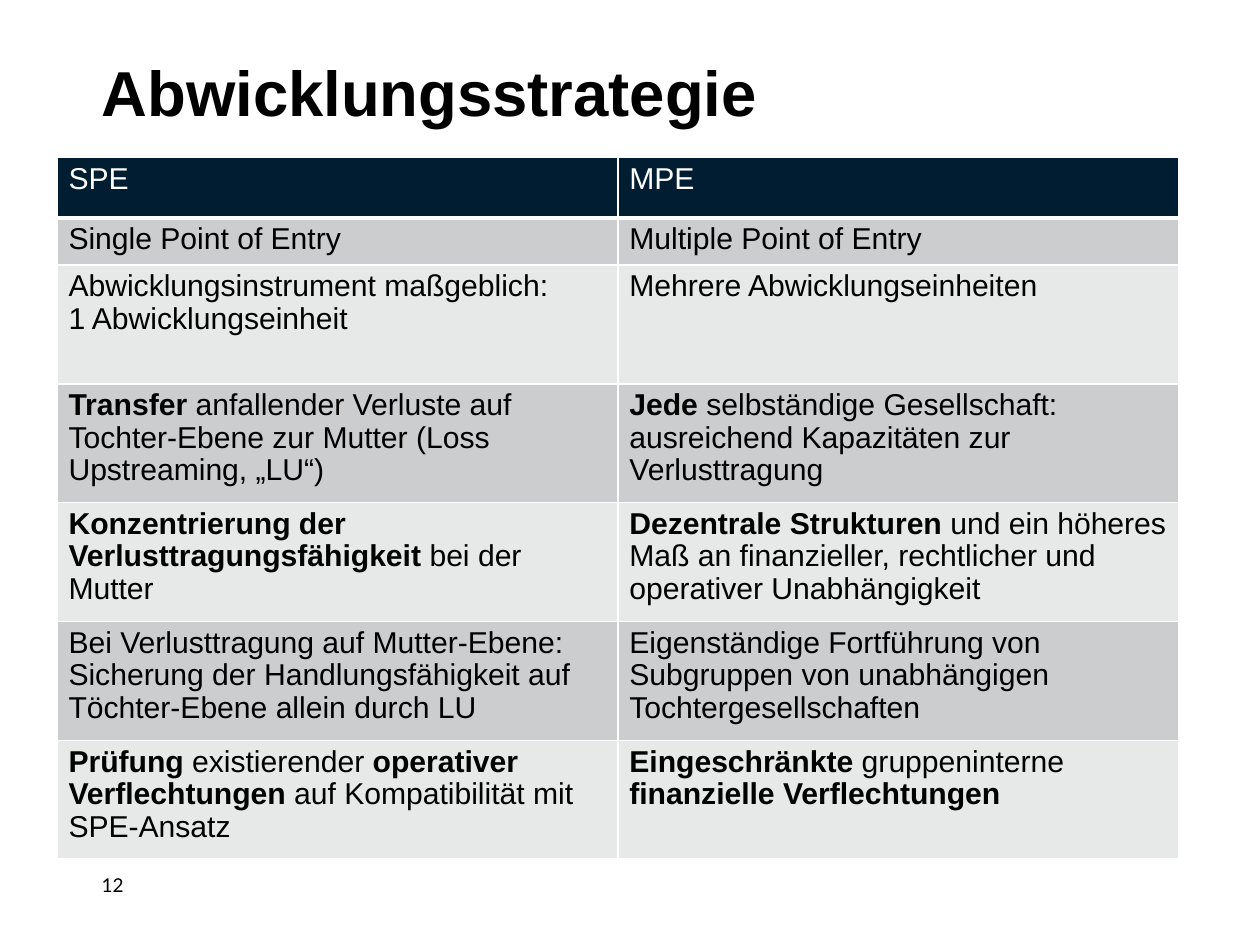
from dataclasses import dataclass

import lxml.etree
import pptx
import pptx.dml.color
import pptx.enum.text
import pptx.oxml.ns
import pptx.util

Inches = pptx.util.Inches
Pt = pptx.util.Pt
ANCHOR = pptx.enum.text.MSO_ANCHOR
qn = pptx.oxml.ns.qn

BLACK, WHITE, NAVY = "000000", "FFFFFF", "001D31"
BANDS = ("CCCDCE", "E7E8E8")


@dataclass
class Row:
    """One comparison row; asterisks enclose bold words."""
    height: float
    spe: str
    mpe: str


ROWS = [
    Row(0.53, "SPE", "MPE"),
    Row(0.41, "Single Point of Entry", "Multiple Point of Entry"),
    Row(1.04, "Abwicklungsinstrument maßgeblich:\n1 Abwicklungseinheit",
        "Mehrere Abwicklungseinheiten"),
    Row(1.04, "*Transfer* anfallender Verluste auf Tochter-Ebene zur Mutter "
        "(Loss Upstreaming, „LU“)",
        "*Jede* selbständige Gesellschaft: ausreichend Kapazitäten zur "
        "Verlusttragung"),
    Row(1.04, "*Konzentrierung der Verlusttragungsfähigkeit* bei der Mutter",
        "*Dezentrale Strukturen *und ein höheres Maß an finanzieller, "
        "rechtlicher und operativer Unabhängigkeit"),
    Row(1.04, "Bei Verlusttragung auf Mutter-Ebene: Sicherung der "
        "Handlungsfähigkeit auf Töchter-Ebene allein durch LU",
        "Eigenständige Fortführung von Subgruppen von unabhängigen "
        "Tochtergesellschaften"),
    Row(1.04, "*Prüfung* existierender *operativer Verflechtungen* auf "
        "Kompatibilität mit SPE-Ansatz",
        "*Eingeschränkte* gruppeninterne *finanzielle Verflechtungen*"),
]


def rgb(color: str) -> pptx.dml.color.RGBColor:
    return pptx.dml.color.RGBColor.from_string(color)


def style(r, size: float, color: str, name: str = "Arial",
          bold: bool = False) -> None:
    r.font.size, r.font.name, r.font.bold = Pt(size), name, bold
    r.font.color.rgb = rgb(color)


def place(sp, left: float, top: float, width: float, height: float) -> None:
    sp.left, sp.top = Inches(left), Inches(top)
    sp.width, sp.height = Inches(width), Inches(height)


def set_borders(cell, bottom: float) -> None:
    """Add white borders ahead of the cell fill."""
    tc_pr = cell._tc.get_or_add_tcPr()
    widths = {"a:lnL": 1, "a:lnR": 1, "a:lnT": 1, "a:lnB": bottom}
    for i, (tag, width) in enumerate(widths.items()):
        ln = lxml.etree.Element(qn(tag), w=str(Pt(width)))
        fill = lxml.etree.SubElement(ln, qn("a:solidFill"))
        lxml.etree.SubElement(fill, qn("a:srgbClr"), val=WHITE)
        tc_pr.insert(i, ln)


def fill_cell(cell, text: str, fill: str, color: str, bottom: float) -> None:
    cell.fill.solid()
    cell.fill.fore_color.rgb = rgb(fill)
    set_borders(cell, bottom)
    tf = cell.text_frame
    for i, line in enumerate(text.split("\n")):
        p = tf.add_paragraph() if i else tf.paragraphs[0]
        p.line_spacing = 0.97
        for j, part in enumerate(line.split("*")):
            if part:
                r = p.add_run()
                r.text = part
                style(r, 19, color, bold=j % 2 == 1)


def main() -> None:
    prs = pptx.Presentation()
    prs.slide_width, prs.slide_height = Inches(11.03), Inches(8.27)
    s = prs.slides.add_slide(prs.slide_layouts[5])

    # Title
    title = s.shapes.title
    place(title, 0.79, 0.39, 7.17, 0.79)
    tf = title.text_frame
    tf.text = "Abwicklungsstrategie"
    tf.vertical_anchor = ANCHOR.BOTTOM
    p = tf.paragraphs[0]
    p.alignment = pptx.enum.text.PP_ALIGN.LEFT
    style(p.runs[0], 40, BLACK, bold=True)

    # Slide number
    number = s.shapes.add_textbox(Inches(0.79), Inches(7.52),
                                  Inches(0.75), Inches(0.44))
    tf = number.text_frame
    tf.word_wrap = True
    tf.text = "12"
    tf.vertical_anchor = ANCHOR.MIDDLE
    style(tf.paragraphs[0].runs[0], 12, BLACK, "Lato")

    # Comparison table
    height = sum(row.height for row in ROWS)
    table = s.shapes.add_table(len(ROWS), 2, Inches(0.5), Inches(1.38),
                               Inches(9.82), Inches(height)).table
    for i, row in enumerate(ROWS):
        table.rows[i].height = Inches(row.height)
        fill, color, bottom = ((BANDS[(i - 1) % 2], BLACK, 1) if i
                               else (NAVY, WHITE, 3))
        for j, text in enumerate((row.spe, row.mpe)):
            fill_cell(table.cell(i, j), text, fill, color, bottom)

    prs.save("out.pptx")


if __name__ == "__main__":
    main()
